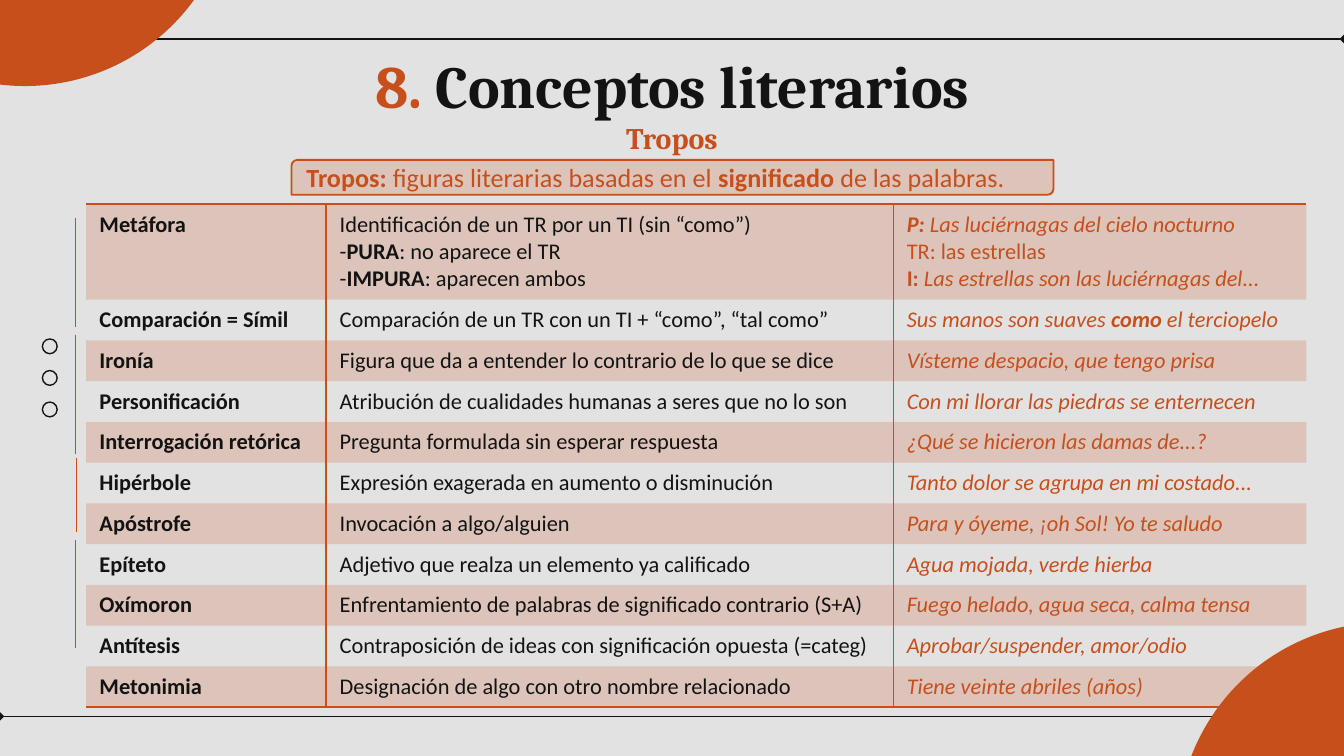
"""Builds the slide on tropes: title, definition and table of figures."""
from lxml import etree
from pptx import Presentation
from pptx.dml.color import RGBColor
from pptx.enum.shapes import MSO_CONNECTOR as Conn, MSO_SHAPE as Geo
from pptx.enum.text import MSO_ANCHOR as Anchor, PP_ALIGN as Align
from pptx.oxml.ns import qn
from pptx.util import Pt

HUES = {"back": "E2E2E2", "ink": "141313", "rust": "C64F1C"}
RGB = {name: RGBColor.from_string(code) for name, code in HUES.items()}


def write(para, text, size, font, hue):
    """Adds runs to a paragraph; * toggles bold and _ toggles italic."""
    slant = False
    for i, part in enumerate(text.split("*")):
        for j, bit in enumerate(part.split("_")):
            slant = slant != (j > 0)
            if bit:
                run = para.add_run()
                run.text = bit
                run.font.size, run.font.name = Pt(size), font
                run.font.bold, run.font.italic = i % 2 == 1, slant
                run.font.color.rgb = RGB[hue]


def tint(fill):
    """Gives a fill the rust colour at 20 % opacity."""
    fill.solid()
    fill.fore_color.rgb = RGB["rust"]
    node = fill._xPr.find(qn("a:solidFill"))[0]
    etree.SubElement(node, qn("a:alpha"), val="20000")


deck = Presentation()
deck.slide_width, deck.slide_height = Pt(720), Pt(405)
slide = deck.slides.add_slide(deck.slide_layouts[6])
slide.background.fill.solid()
slide.background.fill.fore_color.rgb = RGB["back"]
shapes = slide.shapes

rules = [
    (720.7, 383.8, -0.7, 383.8, "ink"),
    (-0.7, 20.9, 720.7, 20.9, "ink"),
    (40.3, 116.6, 40.3, 175, "rust"),
    (40.3, 179.3, 40.3, 243.4, "rust"),
    (41, 245.5, 41, 285.1, "rust"),
    (40.3, 289.4, 40.3, 347, "rust"),
]
for x1, y1, x2, y2, hue in rules:
    line = shapes.add_connector(Conn.STRAIGHT, Pt(x1), Pt(y1), Pt(x2), Pt(y2))
    line.line.color.rgb, line.line.width = RGB[hue], Pt(0.75)
    if hue == "ink":
        etree.SubElement(line.line._get_or_add_ln(), qn("a:tailEnd"), type="diamond")
    etree.SubElement(line._element.spPr, qn("a:effectLst"))

for row in range(3):
    ring = shapes.add_shape(Geo.OVAL, Pt(22.7), Pt(181.6 + 16.9 * row), Pt(7.9), Pt(7.9))
    ring.shadow.inherit = False
    ring.fill.background()
    ring.line.color.rgb, ring.line.width = RGB["ink"], Pt(0.75)

for x, y in [(630.7, 333.4), (-98.6, -177.8)]:
    disc = shapes.add_shape(Geo.OVAL, Pt(x), Pt(y), Pt(223.9), Pt(223.9))
    disc.shadow.inherit = False
    disc.fill.solid()
    disc.fill.fore_color.rgb = RGB["rust"]
    disc.line.fill.background()

heads = [
    (56.9, 18.7, 607, 45.4, 32, [("*8. *", "rust"), ("*Conceptos literarios*", "ink")]),
    (0, 56.9, 720, 35.3, 16, [("*Tropos*", "rust")]),
]
for x, y, w, h, size, parts in heads:
    frame = shapes.add_textbox(Pt(x), Pt(y), Pt(w), Pt(h)).text_frame
    frame.word_wrap = True
    frame.margin_top = frame.margin_bottom = Pt(7.2)
    para = frame.paragraphs[0]
    para.alignment = Align.CENTER
    for text, hue in parts:
        write(para, text, size, "Cambria", hue)

note = shapes.add_shape(Geo.ROUND_2_DIAG_RECTANGLE, Pt(156.2), Pt(85.7), Pt(408.2), Pt(18.7))
note.shadow.inherit = False
tint(note.fill)
note.line.color.rgb, note.line.width = RGB["rust"], Pt(1)
note.text_frame.vertical_anchor = Anchor.MIDDLE
para = note.text_frame.paragraphs[0]
para.alignment = Align.LEFT
text = "*Tropos:* figuras literarias basadas en el *significado* de las palabras."
write(para, text, 14, "Calibri", "rust")

rows = [
    ("Metáfora",
     "Identificación de un TR por un TI (sin “como”)\n-*PURA*: no aparece el TR\n"
     "-*IMPURA*: aparecen ambos",
     "_*P:* Las luciérnagas del cielo nocturno_\nTR: las estrellas\n"
     "*I: *_Las estrellas son las luciérnagas del..._"),
    ("Comparación = Símil", "Comparación de un TR con un TI + “como”, “tal como”",
     "_Sus manos son suaves *como* el terciopelo_"),
    ("Ironía", "Figura que da a entender lo contrario de lo que se dice",
     "_Vísteme despacio, que tengo prisa_"),
    ("Personificación", "Atribución de cualidades humanas a seres que no lo son",
     "_Con mi llorar las piedras se enternecen_"),
    ("Interrogación retórica", "Pregunta formulada sin esperar respuesta",
     "_¿Qué se hicieron las damas de...?_"),
    ("Hipérbole", "Expresión exagerada en aumento o disminución",
     "_Tanto dolor se agrupa en mi costado..._"),
    ("Apóstrofe", "Invocación a algo/alguien", "_Para y óyeme, ¡oh Sol! Yo te saludo_"),
    ("Epíteto", "Adjetivo que realza un elemento ya calificado", "_Agua mojada, verde hierba_"),
    ("Oxímoron", "Enfrentamiento de palabras de significado contrario (S+A)",
     "_Fuego helado, agua seca, calma tensa_"),
    ("Antítesis", "Contraposición de ideas con significación opuesta (=categ)",
     "_Aprobar/suspender, amor/odio_"),
    ("Metonimia", "Designación de algo con otro nombre relacionado",
     "_Tiene veinte abriles (años)_"),
]
last = len(rows) - 1
grid = shapes.add_table(len(rows), 3, Pt(46.1), Pt(109.4), Pt(653.8), Pt(269.6)).table
grid.first_row = grid.horz_banding = False
for col, width in zip(grid.columns, (128.7, 303.8, 221.3)):
    col.width = Pt(width)

for r, texts in enumerate(rows):
    grid.rows[r].height = Pt(21.84 if r else 51.12)
    for c, text in enumerate(texts):
        cell = grid.cell(r, c)
        if r % 2:
            cell.fill.background()
        else:
            tint(cell.fill)
        sides = {"L": c > 0, "R": c < 2, "T": r == 0, "B": r == last}
        for k, (side, shown) in enumerate(sides.items()):
            edge = etree.Element(qn("a:ln" + side), w=str(Pt(1)))
            if shown:
                paint = etree.SubElement(edge, qn("a:solidFill"))
                etree.SubElement(paint, qn("a:srgbClr"), val=HUES["rust"])
            else:
                etree.SubElement(edge, qn("a:noFill"))
            cell._tc.get_or_add_tcPr().insert(k, edge)
        for k, words in enumerate(text.split("\n")):
            frame = cell.text_frame
            para = frame.add_paragraph() if k else frame.paragraphs[0]
            words = words if c else f"*{words}*"
            write(para, words, 12, "Calibri", "rust" if c == 2 else "ink")

deck.save("out.pptx")
